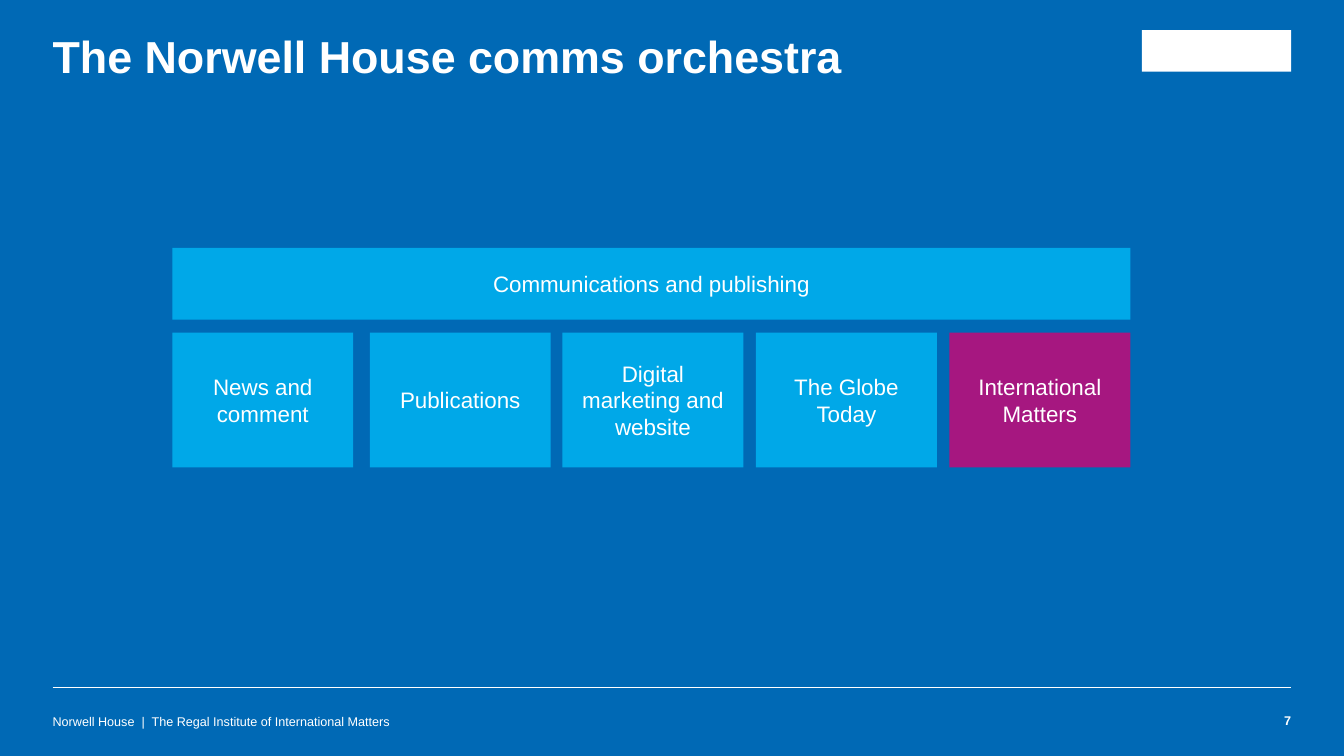
from lxml import etree
from pptx import Presentation
from pptx.dml.color import RGBColor
from pptx.enum.shapes import MSO_CONNECTOR, MSO_SHAPE
from pptx.enum.text import MSO_ANCHOR, PP_ALIGN
from pptx.oxml.ns import qn
from pptx.util import Pt

RECT = MSO_SHAPE.RECTANGLE
STRAIGHT = MSO_CONNECTOR.STRAIGHT
TOP, MIDDLE = MSO_ANCHOR.TOP, MSO_ANCHOR.MIDDLE
LEFT, CENTER, RIGHT = PP_ALIGN.LEFT, PP_ALIGN.CENTER, PP_ALIGN.RIGHT

BLUE = RGBColor(0x00, 0x69, 0xB5)
SKY = RGBColor(0x00, 0xA8, 0xE8)
MAGENTA = RGBColor(0xA6, 0x17, 0x80)
WHITE = RGBColor(0xFF, 0xFF, 0xFF)
FONT = "Arial"

TITLE = "The Norwell House comms orchestra"
FOOTER = "Norwell House  |  The Regal Institute of International Matters"
PAGE = "7"
DEPARTMENT = "Communications and publishing"
# Team name, left edge, fill
TEAMS = [
    ("News and comment", 123.1, SKY),
    ("Publications", 264.2, SKY),
    ("Digital marketing and website", 401.8, SKY),
    ("The Globe Today", 540, SKY),
    ("International Matters", 678.2, MAGENTA),
]

SLIDE_W, SLIDE_H = 960, 540
MARGIN_L, MARGIN_R = 37.6, 922.3
RULE_Y, FOOTER_Y = 491, 500.4
LOGO_W, LOGO_H = 106.6, 29.5
DEPT_Y, DEPT_H = 177.1, 51.2
TEAM_Y, TEAM_W, TEAM_H = 237.6, 129.2, 96.2


def write(sp, text, size, align, anchor, bold=False):
    tf = sp.text_frame
    tf.word_wrap = True
    tf.vertical_anchor = anchor
    p = tf.paragraphs[0]
    p.text = text
    p.alignment = align
    p.font.name = FONT
    p.font.size = Pt(size)
    p.font.bold = bold
    p.font.color.rgb = WHITE
    return tf


def add_label(slide, box, text, size, align=LEFT, anchor=MIDDLE, bold=False):
    """Add a text box without inner margins."""
    sp = slide.shapes.add_textbox(*map(Pt, box))
    tf = write(sp, text, size, align, anchor, bold)
    tf.margin_left = tf.margin_right = tf.margin_top = tf.margin_bottom = 0


def add_block(slide, box, fill):
    sp = slide.shapes.add_shape(RECT, *map(Pt, box))
    sp.shadow.inherit = False
    sp.fill.solid()
    sp.fill.fore_color.rgb = fill
    sp.line.fill.background()
    return sp


def add_rule(slide, x1, x2, y):
    line = slide.shapes.add_connector(STRAIGHT, Pt(x1), Pt(y), Pt(x2), Pt(y))
    line.line.color.rgb = WHITE
    line.line.width = Pt(0.75)
    etree.SubElement(line._element.spPr, qn("a:effectLst"))


def main():
    prs = Presentation()
    prs.slide_width, prs.slide_height = Pt(SLIDE_W), Pt(SLIDE_H)
    slide = prs.slides.add_slide(prs.slide_layouts[6])
    slide.background.fill.solid()
    slide.background.fill.fore_color.rgb = BLUE

    logo_x = MARGIN_R - LOGO_W
    add_block(slide, (logo_x, 21.6, LOGO_W, LOGO_H), WHITE)
    add_rule(slide, MARGIN_L, MARGIN_R, RULE_Y)
    add_label(slide, (MARGIN_L, FOOTER_Y, 442, 30), FOOTER, 9)
    add_label(slide, (logo_x, FOOTER_Y, LOGO_W, 29), PAGE, 9, RIGHT, bold=True)
    add_label(slide, (MARGIN_L, 20.2, 663, 62.6), TITLE, 32, anchor=TOP, bold=True)

    first_x, last_x = TEAMS[0][1], TEAMS[-1][1]
    dept_w = last_x + TEAM_W - first_x
    sp = add_block(slide, (first_x, DEPT_Y, dept_w, DEPT_H), SKY)
    write(sp, DEPARTMENT, 16, CENTER, MIDDLE)
    for name, x, fill in TEAMS:
        sp = add_block(slide, (x, TEAM_Y, TEAM_W, TEAM_H), fill)
        write(sp, name, 16, CENTER, MIDDLE)

    prs.save("out.pptx")


if __name__ == "__main__":
    main()
